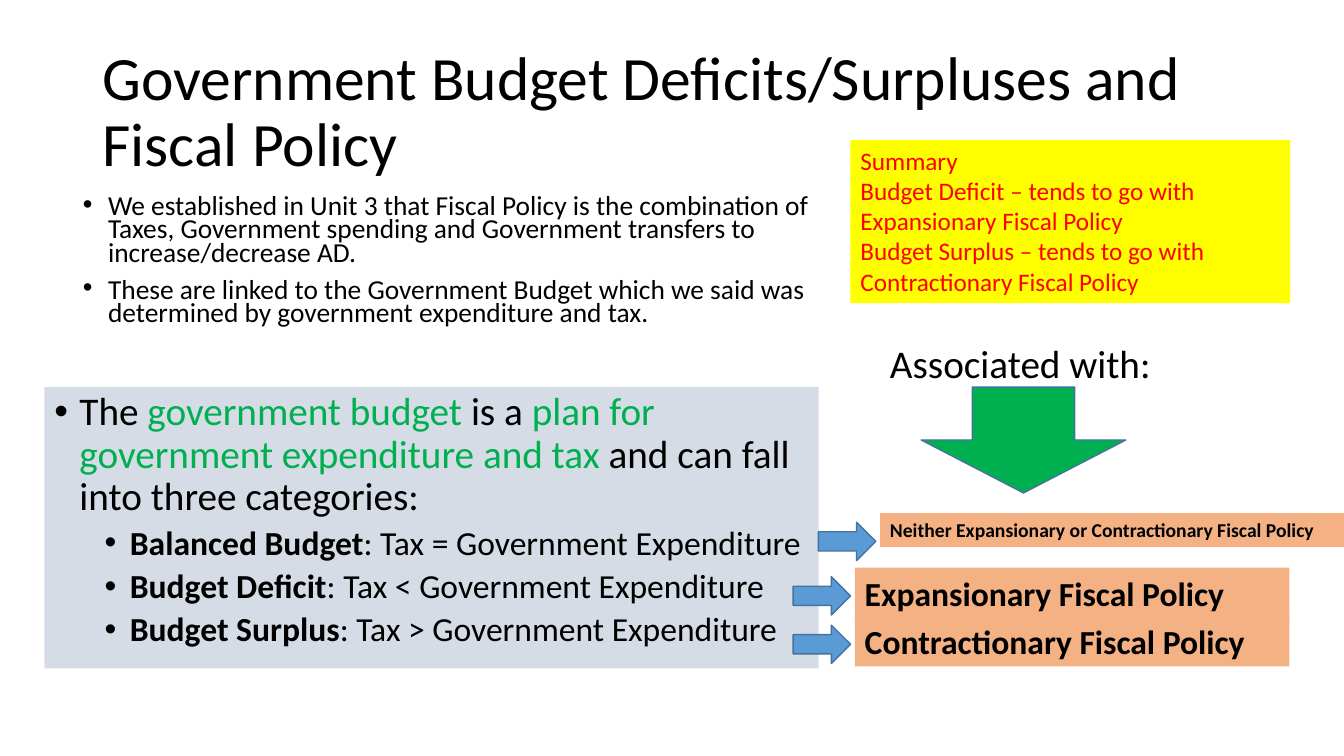
"""Build a slide linking government budget outcomes to fiscal policy."""
import pptx
import pptx.dml.color
import pptx.enum.shapes
import pptx.enum.text
import pptx.oxml
import pptx.oxml.ns
import pptx.util

Pt = pptx.util.Pt
SHAPES = pptx.enum.shapes.MSO_SHAPE
ANCHORS = pptx.enum.text.MSO_ANCHOR
FIT = pptx.enum.text.MSO_AUTO_SIZE
BLACK, RED, GREEN = "000000", "FF0000", "00B050"
BLUE, BLUE_EDGE = "5B9BD5", "43739E"
ORANGE, YELLOW, GREY = "F4B183", "FFFF00", "D6DCE5"


def rgb(value):
    return pptx.dml.color.RGBColor.from_string(value)


def add_span(para, text, size=18, color=BLACK, bold=False, font="Calibri"):
    span = para.add_run()
    span.text = text
    span.font.name = font
    span.font.size = Pt(size)
    span.font.bold = bold
    span.font.color.rgb = rgb(color)


def add_bullet(para, margin):
    settings = para._p.get_or_add_pPr()
    settings.set("marL", str(Pt(margin)))
    settings.set("indent", str(Pt(-18)))
    for tag, name, value in (("buFont", "typeface", "Arial"), ("buChar", "char", "•")):
        mark = pptx.oxml.parse_xml(f'<a:{tag} {pptx.oxml.ns.nsdecls("a")} {name}="{value}"/>')
        settings.append(mark)


class Page:
    def __init__(self, deck):
        self.slide = deck.slides.add_slide(deck.slide_layouts[1])

    def fill_text(self, frame, paragraphs, spacing=None, before=0, margin=None, **style):
        for index, text in enumerate(paragraphs):
            para = frame.paragraphs[0] if index == 0 else frame.add_paragraph()
            para.alignment = pptx.enum.text.PP_ALIGN.LEFT
            para.line_spacing = spacing
            para.space_before = Pt(before)
            if margin is not None:
                add_bullet(para, margin)
            add_span(para, text, **style)

    def placeholder(self, index, area, paragraphs, anchor, **style):
        holder = self.slide.placeholders[index]
        holder.left, holder.top, holder.width, holder.height = map(Pt, area)
        frame = holder.text_frame
        frame.auto_size = FIT.NONE
        frame.vertical_anchor = anchor
        self.fill_text(frame, paragraphs, **style)

    def box(self, area, paragraphs=(), fill=None, **style):
        box = self.slide.shapes.add_textbox(*map(Pt, area))
        box.text_frame.word_wrap = True
        if fill:
            box.fill.solid()
            box.fill.fore_color.rgb = rgb(fill)
        self.fill_text(box.text_frame, paragraphs, **style)
        return box.text_frame

    def arrow(self, kind, area, fill):
        arrow = self.slide.shapes.add_shape(kind, *map(Pt, area))
        arrow.shadow.inherit = False
        arrow.fill.solid()
        arrow.fill.fore_color.rgb = rgb(fill)
        arrow.line.color.rgb = rgb(BLUE_EDGE)
        arrow.line.width = Pt(1)

    def budget_plan(self, area, sentence, categories):
        frame = self.box(area, fill=GREY)
        intro = frame.paragraphs[0]
        intro.line_spacing, intro.space_before = 0.9, Pt(10)
        add_bullet(intro, 18)
        for text, color in sentence:
            add_span(intro, text, size=28, color=color)
        for name, rule in categories:
            para = frame.add_paragraph()
            para.level = 1
            para.line_spacing, para.space_before = 0.9, Pt(5)
            add_bullet(para, 54)
            add_span(para, name, size=24, bold=True)
            add_span(para, f": Tax {rule} Government Expenditure", size=24)


def main():
    deck = pptx.Presentation()
    deck.slide_width, deck.slide_height = Pt(960), Pt(540)
    page = Page(deck)
    page.placeholder(0, (66, 28.75, 828, 104.4),
                     ["Government Budget Deficits/Surpluses and Fiscal Policy"],
                     ANCHORS.MIDDLE, spacing=0.9, size=44)
    page.placeholder(1, (52, 137.5, 535, 116), [
        "We established in Unit 3 that Fiscal Policy is the combination of Taxes, "
        "Government spending and Government transfers to increase/decrease AD.",
        "These are linked to the Government Budget which we said was determined by "
        "government expenditure and tax.",
    ], ANCHORS.TOP, spacing=0.7, before=10, margin=18, size=19.6)
    page.budget_plan((31.7, 276.5, 553, 200.9), [
        ("The ", BLACK), ("government budget ", GREEN), ("is a ", BLACK),
        ("plan for government expenditure and tax ", GREEN),
        ("and can fall into three categories:", BLACK),
    ], [("Balanced Budget", "="), ("Budget Deficit", "<"), ("Budget Surplus", ">")])

    policies = [
        ("Neither Expansionary or Contractionary Fiscal Policy", (628.6, 366.5, 348, 24.2), 14),
        ("Expansionary Fiscal Policy", (610.6, 405.4, 310.4, 36), 24),
        ("Contractionary Fiscal Policy", (610.6, 440, 310.4, 36), 24),
    ]
    for text, area, size in policies:
        page.box(area, [text], fill=ORANGE, size=size, bold=True)
        left, top = area[:2]
        page.arrow(SHAPES.RIGHT_ARROW, (left - 44, top + 6.5, 41, 27.4), BLUE)

    page.box((628.6, 239, 238.3, 41), ["Associated with:"], size=28)
    page.arrow(SHAPES.DOWN_ARROW, (658, 276.5, 146.2, 75.6), GREEN)
    page.box((607.5, 100, 314, 116.6), [
        "Summary",
        "Budget Deficit – tends to go with Expansionary Fiscal Policy",
        "Budget Surplus – tends to go with Contractionary Fiscal Policy",
    ], fill=YELLOW, size=18, color=RED)
    deck.save("out.pptx")


if __name__ == "__main__":
    main()
